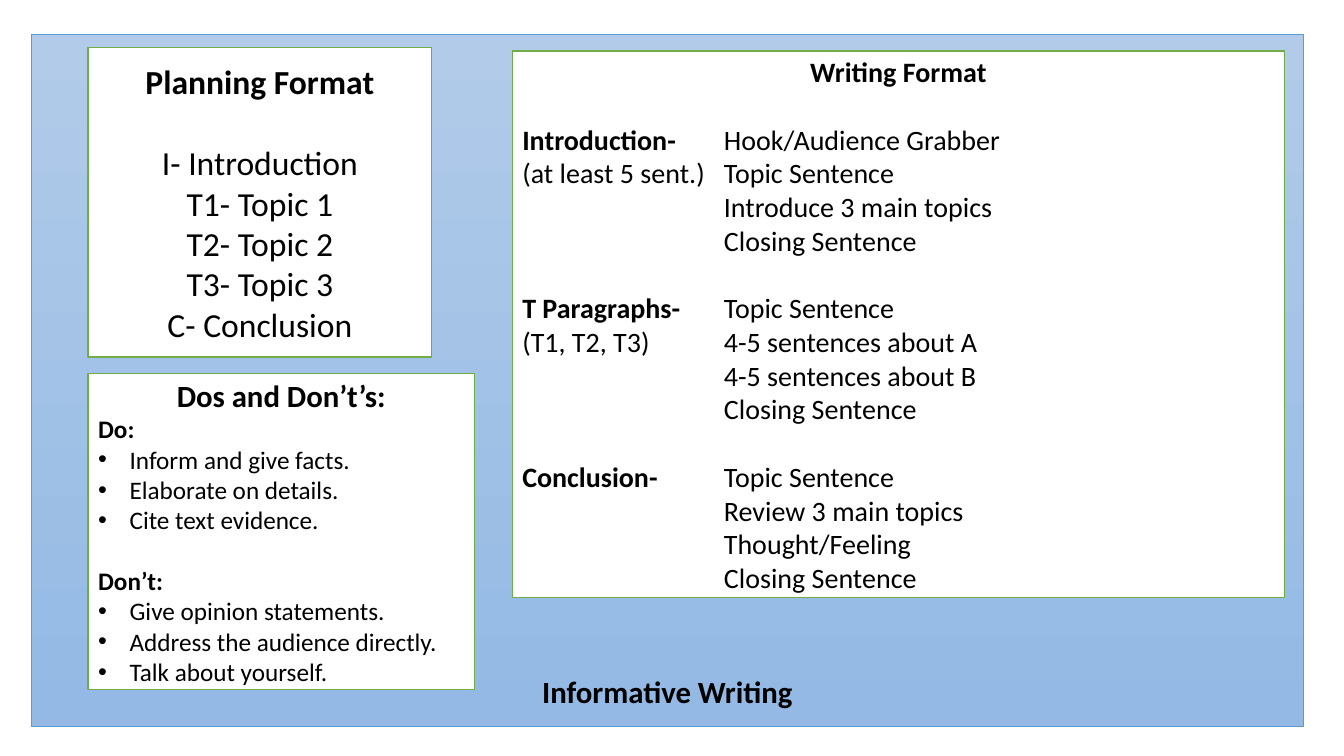
from lxml import etree
from pptx import Presentation
from pptx.dml.color import RGBColor
from pptx.enum.shapes import MSO_SHAPE
from pptx.enum.text import MSO_ANCHOR, PP_ALIGN
from pptx.oxml.ns import qn
from pptx.util import Pt

RECTANGLE = MSO_SHAPE.RECTANGLE
LEFT, CENTER = PP_ALIGN.LEFT, PP_ALIGN.CENTER
MIDDLE, BOTTOM = MSO_ANCHOR.MIDDLE, MSO_ANCHOR.BOTTOM

THEME = {
    "font": "Calibri",
    "text": RGBColor.from_string("000000"),
    "card": RGBColor.from_string("FFFFFF"),
    "card_line": RGBColor.from_string("70AD47"),
    "board_line": RGBColor.from_string("5B9BD5"),
    "board_top": RGBColor.from_string("B1CBE9"),
    "board_bottom": RGBColor.from_string("93B9E4"),
    "planning": 24,
    "heading": 22,
    "writing": 20,
    "advice": 18,
}
LINE_HEIGHT = 1.22
BULLET_INDENT = Pt(22.5)
DETAIL_TAB = Pt(144)


def add_panel(left, top, width, height, line, line_width, anchor=MIDDLE):
    panel = slide.shapes.add_shape(RECTANGLE, Pt(left), Pt(top), Pt(width), Pt(height))
    panel.shadow.inherit = False
    panel.fill.solid()
    panel.fill.fore_color.rgb = THEME["card"]
    panel.line.color.rgb = line
    panel.line.width = Pt(line_width)
    panel.text_frame.word_wrap = True
    panel.text_frame.vertical_anchor = anchor
    return panel


def add_line(panel, size, bold="", regular="", align=LEFT, gap=False, bullet=False, tab=False):
    frame = panel.text_frame
    line = frame.add_paragraph() if frame.text else frame.paragraphs[0]
    line.alignment = align
    properties = line._p.get_or_add_pPr()
    if bullet:
        properties.set("marL", str(BULLET_INDENT))
        properties.set("indent", str(-BULLET_INDENT))
        etree.SubElement(properties, qn("a:buFont"), typeface="Arial")
        etree.SubElement(properties, qn("a:buChar"), char="•")
    if tab:
        stops = etree.SubElement(properties, qn("a:tabLst"))
        etree.SubElement(stops, qn("a:tab"), pos=str(DETAIL_TAB), algn="l")
    if gap:
        line.space_before = Pt(round(size * LINE_HEIGHT, 1))
    line.font.name = THEME["font"]
    line.font.size = Pt(size)
    line.font.color.rgb = THEME["text"]
    if not (bold and regular):
        line.font.bold = bool(bold)
    for text, weight in ((bold, True), (regular, False)):
        if text:
            run = line.add_run()
            run.text = text
            if bold and regular:
                run.font.bold = weight


deck = Presentation()
deck.slide_width, deck.slide_height = Pt(960), Pt(540)
slide = deck.slides.add_slide(deck.slide_layouts[6])

board = add_panel(22.5, 24.7, 908.5, 494.5, THEME["board_line"], 0.5, BOTTOM)
board.fill.gradient()
board.fill.gradient_angle = 270
for stop, color in zip(board.fill.gradient_stops, (THEME["board_top"], THEME["board_bottom"])):
    stop.color.rgb = color
board.text_frame.margin_bottom = Pt(12.5)
add_line(board, THEME["heading"], "Informative Writing", align=CENTER)

planning = add_panel(63, 34, 245.3, 221, THEME["card_line"], 1)
add_line(planning, THEME["planning"], "Planning Format", align=CENTER)
plan_steps = ["I- Introduction", "T1- Topic 1", "T2- Topic 2", "T3- Topic 3", "C- Conclusion"]
for index, step in enumerate(plan_steps):
    add_line(planning, THEME["planning"], regular=step, align=CENTER, gap=index == 0)

writing = add_panel(366, 36.5, 551.5, 390.2, THEME["card_line"], 1)
add_line(writing, THEME["writing"], "Writing Format", align=CENTER)
sections = [
    ("Introduction-", "(at least 5 sent.)",
     ["Hook/Audience Grabber", "Topic Sentence", "Introduce 3 main topics", "Closing Sentence"]),
    ("T Paragraphs-", "(T1, T2, T3)",
     ["Topic Sentence", "4-5 sentences about A", "4-5 sentences about B", "Closing Sentence"]),
    ("Conclusion-", "",
     ["Topic Sentence", "Review 3 main topics", "Thought/Feeling", "Closing Sentence"]),
]
for section, note, details in sections:
    add_line(writing, THEME["writing"], section, "\t" + details[0], gap=True, tab=True)
    for label, detail in zip((note, "", ""), details[1:]):
        add_line(writing, THEME["writing"], regular=label + "\t" + detail, tab=True)

advice = add_panel(63, 266.7, 275.8, 226, THEME["card_line"], 1)
add_line(advice, THEME["heading"], "Dos and Don’t’s:", align=CENTER)
advice_groups = {
    "Do:": ["Inform and give facts.", "Elaborate on details.", "Cite text evidence."],
    "Don’t:": ["Give opinion statements.", "Address the audience directly.", "Talk about yourself."],
}
for index, (group, tips) in enumerate(advice_groups.items()):
    add_line(advice, THEME["advice"], group, gap=index > 0)
    for tip in tips:
        add_line(advice, THEME["advice"], regular=tip, bullet=True)

deck.save("out.pptx")
